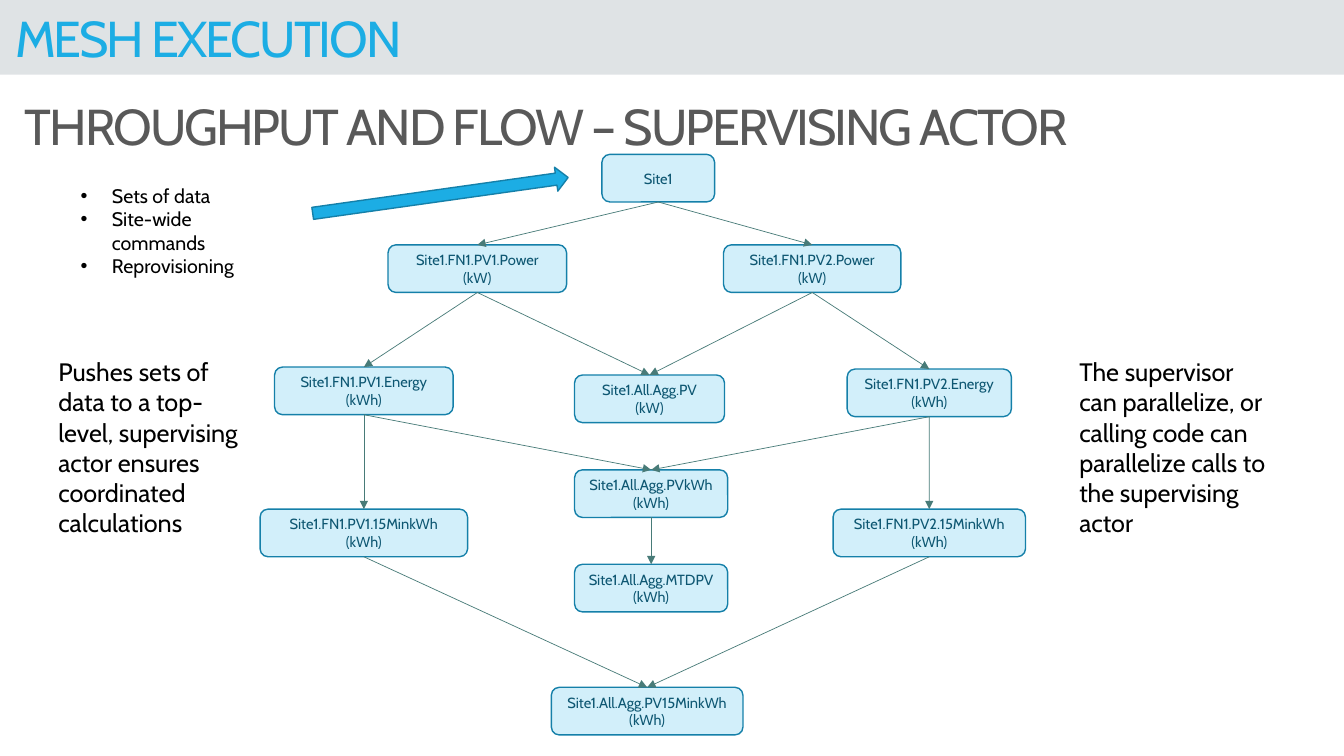
import pptx
import pptx.util
import pptx.dml.color
import pptx.enum.shapes
import pptx.enum.text
import pptx.oxml
import pptx.oxml.ns

Cm = pptx.util.Cm
Pt = pptx.util.Pt
SHAPES = pptx.enum.shapes.MSO_SHAPE
NAMESPACE = pptx.oxml.ns.nsdecls("a")


def paint(color_format, color):
    color_format.rgb = pptx.dml.color.RGBColor.from_string(color)


def write(paragraph, text, size, color):
    run = paragraph.add_run()
    run.text = text
    run.font.name = "Cabin"
    run.font.size = Pt(size)
    paint(run.font.color, color)
    return run


presentation = pptx.Presentation()
presentation.slide_width = Cm(33.87)
presentation.slide_height = Cm(19.05)
slide = presentation.slides.add_slide(presentation.slide_layouts[6])

header = slide.shapes.add_shape(SHAPES.RECTANGLE, 0, 0, Cm(33.87), Cm(1.88))
header.shadow.inherit = False
header.fill.solid()
paint(header.fill.fore_color, "DFE3E5")
header.line.fill.background()

node_boxes = [
    ("Site1", 16.59, 3.89, 2.84),
    ("Site1.FN1.PV1.Power (kW)", 12.03, 6.17, 4.5),
    ("Site1.FN1.PV2.Power (kW)", 20.47, 6.17, 4.47),
    ("Site1.FN1.PV1.Energy (kWh)", 9.17, 9.25, 4.5),
    ("Site1.FN1.PV2.Energy (kWh)", 23.42, 9.3, 4.14),
    ("Site1.All.Agg.PV (kW)", 16.37, 9.45, 3.78),
    ("Site1.All.Agg.PVkWh (kWh)", 16.41, 11.84, 3.86),
    ("Site1.FN1.PV1.15MinkWh (kWh)", 9.17, 12.83, 5.23),
    ("Site1.FN1.PV2.15MinkWh (kWh)", 23.42, 12.83, 4.85),
    ("Site1.All.Agg.MTDPV (kWh)", 16.41, 14.22, 3.86),
    ("Site1.All.Agg.PV15MinkWh (kWh)", 16.31, 17.32, 4.83),
]
nodes = {}
for label, center, top, width in node_boxes:
    node = slide.shapes.add_shape(
        SHAPES.ROUNDED_RECTANGLE, Cm(center - width / 2), Cm(top), Cm(width), Cm(1.2))
    node.shadow.inherit = False
    node.fill.solid()
    paint(node.fill.fore_color, "D2EFFA")
    paint(node.line.color, "1580A9")
    node.line.width = Pt(1)
    node.text_frame.word_wrap = True
    node.text_frame.vertical_anchor = pptx.enum.text.MSO_ANCHOR.MIDDLE
    paragraph = node.text_frame.paragraphs[0]
    paragraph.alignment = pptx.enum.text.PP_ALIGN.CENTER
    write(paragraph, label, 10.5, "0E5772")
    nodes[label.split(" ")[0].removeprefix("Site1.")] = node

flows = [
    ("Site1", "FN1.PV1.Power"),
    ("Site1", "FN1.PV2.Power"),
    ("FN1.PV1.Power", "FN1.PV1.Energy"),
    ("FN1.PV1.Power", "All.Agg.PV"),
    ("FN1.PV2.Power", "All.Agg.PV"),
    ("FN1.PV2.Power", "FN1.PV2.Energy"),
    ("FN1.PV1.Energy", "FN1.PV1.15MinkWh"),
    ("FN1.PV1.Energy", "All.Agg.PVkWh"),
    ("FN1.PV2.Energy", "All.Agg.PVkWh"),
    ("FN1.PV2.Energy", "FN1.PV2.15MinkWh"),
    ("All.Agg.PVkWh", "All.Agg.MTDPV"),
    ("FN1.PV1.15MinkWh", "All.Agg.PV15MinkWh"),
    ("FN1.PV2.15MinkWh", "All.Agg.PV15MinkWh"),
]
for source, target in flows:
    connector = slide.shapes.add_connector(
        pptx.enum.shapes.MSO_CONNECTOR.STRAIGHT, 0, 0, 0, 0)
    connector.begin_connect(nodes[source], 2)
    connector.end_connect(nodes[target], 0)
    paint(connector.line.color, "487B78")
    connector.line.width = Pt(0.5)
    connector.line._get_or_add_ln().append(
        pptx.oxml.parse_xml(f'<a:tailEnd {NAMESPACE} type="triangle"/>'))
    connector._element.spPr.append(pptx.oxml.parse_xml(f"<a:effectLst {NAMESPACE}/>"))

arrow = slide.shapes.add_shape(SHAPES.RIGHT_ARROW, Cm(7.85), Cm(4.62), Cm(6.5), Cm(0.61))
arrow.rotation = 352
arrow.shadow.inherit = False
arrow.fill.solid()
paint(arrow.fill.fore_color, "1CADE4")
paint(arrow.line.color, "1580A9")
arrow.line.width = Pt(1)

text_boxes = [
    (["MESH EXECUTION"], 0.13, 0.05, 33.87, 1.8, 36, "1CADE4"),
    (["THROUGHPUT AND FLOW – SUPERVISING ACTOR"], 0.38, 2.26, 33.05, 1.8, 36, "595959"),
    (["Pushes sets of data to a top-level, supervising actor ensures coordinated calculations"],
     1.22, 8.86, 5.23, 4.88, 18, "000000"),
    (["The supervisor can parallelize, or calling code can parallelize calls to the supervising actor"],
     26.95, 8.86, 5.23, 4.88, 18, "000000"),
    (["Sets of data", "Site-wide commands", "Reprovisioning"],
     1.78, 4.5, 5.66, 2.06, 14, "000000"),
]
for lines, left, top, width, height, size, color in text_boxes:
    text_frame = slide.shapes.add_textbox(Cm(left), Cm(top), Cm(width), Cm(height)).text_frame
    text_frame.word_wrap = True
    text_frame.auto_size = pptx.enum.text.MSO_AUTO_SIZE.SHAPE_TO_FIT_TEXT
    for index, line in enumerate(lines):
        paragraph = text_frame.add_paragraph() if index else text_frame.paragraphs[0]
        run = write(paragraph, line, size, color)
        if size == 36:
            run.font._element.set("spc", "-150")
        if len(lines) > 1:
            properties = paragraph._p.get_or_add_pPr()
            properties.set("marL", str(Cm(0.79)))
            properties.set("indent", str(-Cm(0.79)))
            properties.append(pptx.oxml.parse_xml(f'<a:buFont {NAMESPACE} typeface="Arial"/>'))
            properties.append(pptx.oxml.parse_xml(f'<a:buChar {NAMESPACE} char="•"/>'))

presentation.save("out.pptx")
